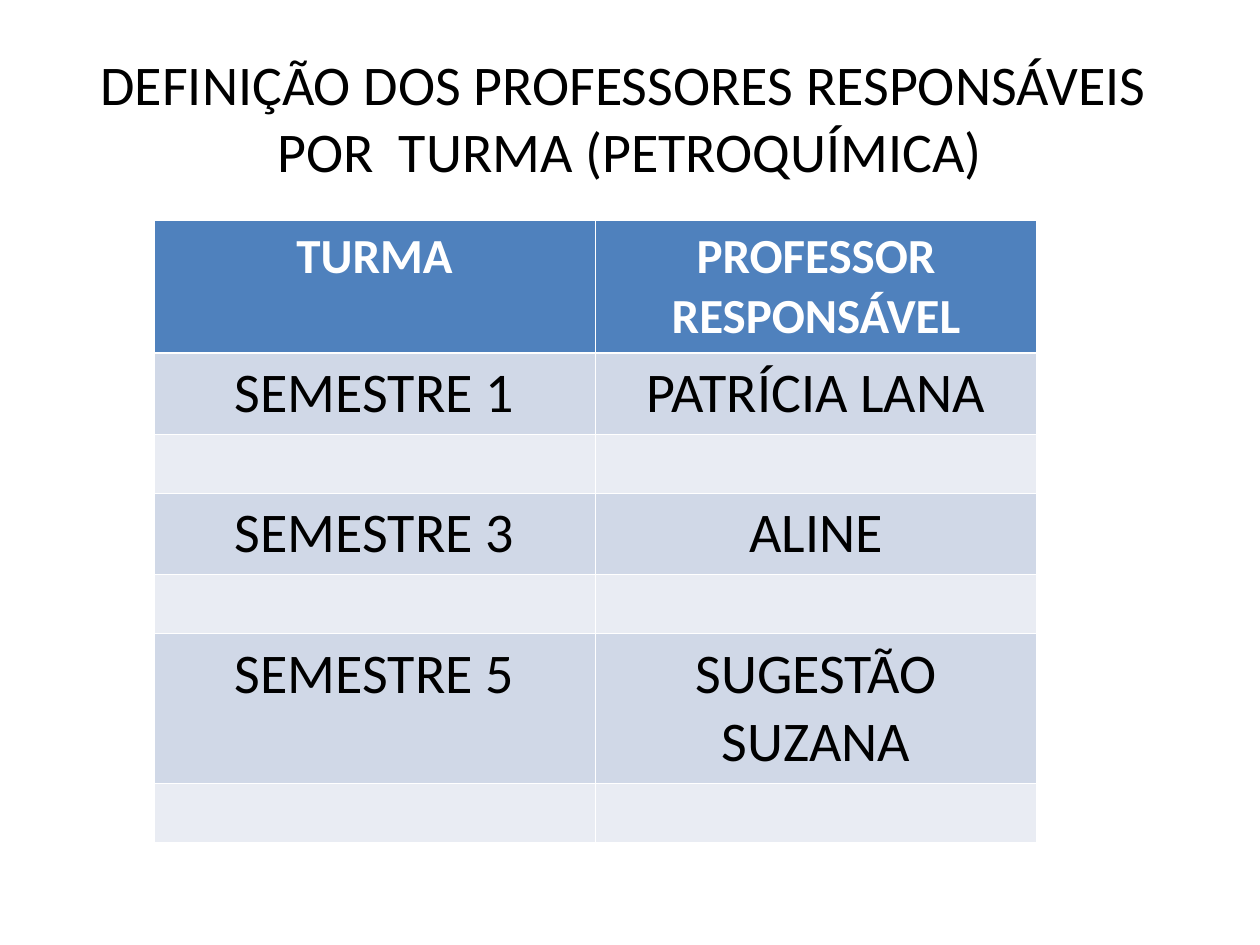
from pptx import Presentation
from pptx.dml.color import RGBColor
from pptx.enum.text import MSO_ANCHOR, PP_ALIGN
from pptx.util import Cm, Pt

COLORS = {
    "header": "4F81BD",
    "filled": "D0D8E7",
    "empty": "E9ECF3",
    "white": "FFFFFF",
    "black": "000000",
}
TITLE = "DEFINIÇÃO DOS PROFESSORES RESPONSÁVEIS  POR  TURMA (PETROQUÍMICA)"
EMPTY_ROW = ("", "", 1.19)
# Class, teacher, row height in cm
ROWS = [
    ("TURMA", "PROFESSOR RESPONSÁVEL", 2.67),
    ("SEMESTRE 1", "PATRÍCIA LANA", 1.63),
    EMPTY_ROW,
    ("SEMESTRE 3", "ALINE", 1.63),
    EMPTY_ROW,
    ("SEMESTRE 5", "SUGESTÃO SUZANA", 3.02),
    EMPTY_ROW,
]
COLUMN_WIDTH = 8.9


def write_centered(frame, text, color, **formats):
    para = frame.paragraphs[0]
    para.alignment = PP_ALIGN.CENTER
    span = para.add_run()
    span.text = text
    span.font.color.rgb = RGBColor.from_string(COLORS[color])
    for name, value in {"name": "Calibri", **formats}.items():
        setattr(span.font, name, value)


deck = Presentation()
deck.slide_width, deck.slide_height = Cm(25.4), Cm(19.05)
page = deck.slides.add_slide(deck.slide_layouts[5])

title = page.shapes.title
place = {"left": 1.27, "top": 0.76, "width": 22.86, "height": 3.18}
for name, value in place.items():
    setattr(title, name, Cm(value))
title.text_frame.word_wrap = True
title.text_frame.vertical_anchor = MSO_ANCHOR.MIDDLE
write_centered(title.text_frame, TITLE, "black", size=Pt(32), bold=False)

table = page.shapes.add_table(
    len(ROWS), 2, Cm(3.1), Cm(4.45),
    Cm(2 * COLUMN_WIDTH), Cm(sum(row[-1] for row in ROWS)),
).table
for column in table.columns:
    column.width = Cm(COLUMN_WIDTH)

for index, (*texts, height) in enumerate(ROWS):
    table.rows[index].height = Cm(height)
    is_header = index == 0
    fill = "header" if is_header else "filled" if index % 2 else "empty"
    for cell, text in zip(table.rows[index].cells, texts):
        cell.fill.solid()
        cell.fill.fore_color.rgb = RGBColor.from_string(COLORS[fill])
        if text:
            write_centered(
                cell.text_frame, text, "white" if is_header else "black",
                size=Pt(28 if is_header else 32), bold=is_header,
            )

deck.save("out.pptx")
